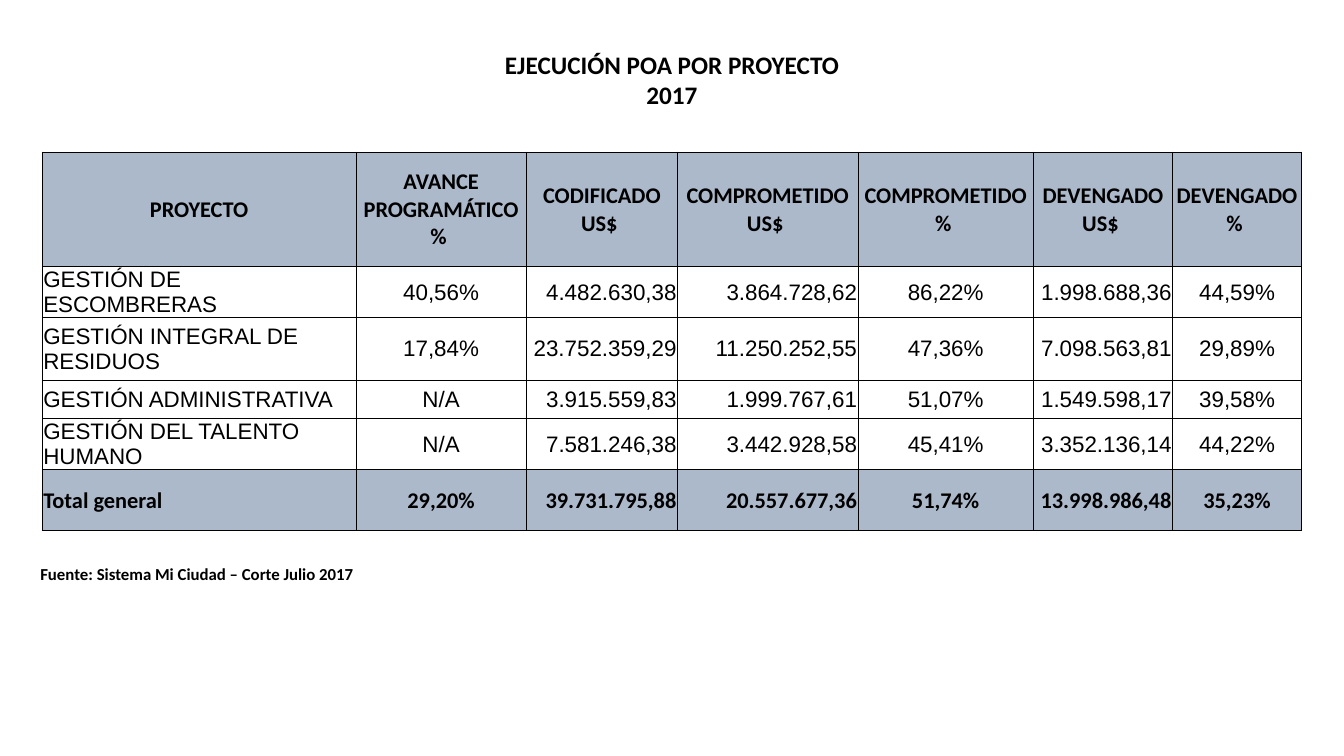
from lxml import etree
from pptx import Presentation
from pptx.dml.color import RGBColor
from pptx.enum.text import MSO_ANCHOR, PP_ALIGN
from pptx.oxml.ns import qn
from pptx.util import Inches, Pt

LEFT, CENTER, RIGHT = PP_ALIGN.LEFT, PP_ALIGN.CENTER, PP_ALIGN.RIGHT
MIDDLE = MSO_ANCHOR.MIDDLE

COLORS = {"text": "000000", "border": "000000", "band": "ACB9CA"}

COLUMN_WIDTHS = [3.11, 1.69, 1.5, 1.79, 1.74, 1.38, 1.28]
COLUMN_ALIGNMENTS = [LEFT, CENTER, RIGHT, RIGHT, CENTER, RIGHT, CENTER]
ROW_HEIGHTS = [1.13, 0.51, 0.62, 0.38, 0.51, 0.6]
ROWS = [
    ["PROYECTO", "AVANCE PROGRAMÁTICO % ", "CODIFICADO US$ ", "COMPROMETIDO US$ ",
     "COMPROMETIDO % ", "DEVENGADO US$ ", "DEVENGADO % "],
    ["GESTIÓN DE ESCOMBRERAS", "40,56%", "4.482.630,38", "3.864.728,62",
     "86,22%", "1.998.688,36", "44,59%"],
    ["GESTIÓN INTEGRAL DE RESIDUOS", "17,84%", "23.752.359,29", "11.250.252,55",
     "47,36%", "7.098.563,81", "29,89%"],
    ["GESTIÓN ADMINISTRATIVA", "N/A", "3.915.559,83", "1.999.767,61",
     "51,07%", "1.549.598,17", "39,58%"],
    ["GESTIÓN DEL TALENTO HUMANO", "N/A", "7.581.246,38", "3.442.928,58",
     "45,41%", "3.352.136,14", "44,22%"],
    ["Total general", "29,20%", "39.731.795,88", "20.557.677,36",
     "51,74%", "13.998.986,48", "35,23%"],
]


class SlideBuilder:
    """Hold the style and the current slide, and add its elements."""

    def __init__(self, slide):
        self.slide = slide
        self.heading_font = "Calibri"
        self.body_font = "Arial"

    def add_run(self, paragraph, text, size, bold=True, alignment=LEFT):
        paragraph.alignment = alignment
        run = paragraph.add_run()
        run.text = text
        run.font.name = self.heading_font if bold else self.body_font
        run.font.size = Pt(size)
        run.font.bold = bold
        run.font.color.rgb = RGBColor.from_string(COLORS["text"])

    def add_text(self, box, lines, size, alignment=LEFT):
        shape = self.slide.shapes.add_textbox(*map(Inches, box))
        frame = shape.text_frame
        frame.word_wrap = True
        frame.vertical_anchor = MIDDLE
        frame.margin_left = frame.margin_right = Inches(0.09)
        frame.margin_top = frame.margin_bottom = Inches(0.04)
        for index, line in enumerate(lines):
            paragraph = frame.add_paragraph() if index else frame.paragraphs[0]
            self.add_run(paragraph, line, size, alignment=alignment)

    def add_borders(self, cell, outer_sides):
        properties = cell._tc.get_or_add_tcPr()
        for side, is_outer in outer_sides.items():
            width = Pt(1 if is_outer else 0.5)
            line = etree.SubElement(properties, qn(f"a:ln{side}"), w=str(width))
            fill = etree.SubElement(line, qn("a:solidFill"))
            etree.SubElement(fill, qn("a:srgbClr"), val=COLORS["border"])

    def add_table(self, left, top):
        last_row, last_column = len(ROWS) - 1, len(COLUMN_WIDTHS) - 1
        table = self.slide.shapes.add_table(
            len(ROWS), len(COLUMN_WIDTHS), Inches(left), Inches(top),
            Inches(sum(COLUMN_WIDTHS)), Inches(sum(ROW_HEIGHTS))).table
        table.first_row = table.horz_banding = False
        for column, width in zip(table.columns, COLUMN_WIDTHS):
            column.width = Inches(width)
        for row_index, values in enumerate(ROWS):
            table.rows[row_index].height = Inches(ROW_HEIGHTS[row_index])
            is_band = row_index in (0, last_row)
            for column_index, value in enumerate(values):
                cell = table.cell(row_index, column_index)
                cell.vertical_anchor = MIDDLE
                cell.margin_left = cell.margin_right = cell.margin_top = Inches(0.01)
                cell.margin_bottom = 0
                self.add_borders(cell, {
                    "L": column_index == 0, "R": column_index == last_column,
                    "T": row_index == 0, "B": row_index == last_row})
                if is_band:
                    cell.fill.solid()
                    cell.fill.fore_color.rgb = RGBColor.from_string(COLORS["band"])
                else:
                    cell.fill.background()
                alignment = COLUMN_ALIGNMENTS[column_index] if row_index else CENTER
                self.add_run(cell.text_frame.paragraphs[0], value, 16, is_band, alignment)


def main():
    presentation = Presentation()
    presentation.slide_width = Inches(13.33)
    presentation.slide_height = Inches(7.5)
    builder = SlideBuilder(presentation.slides.add_slide(presentation.slide_layouts[6]))
    builder.add_table(0.42, 1.51)
    builder.add_text((0.42, 0.4, 12.49, 0.77), ["EJECUCIÓN POA POR PROYECTO", "2017"], 18, CENTER)
    builder.add_text((0.31, 5.45, 4.57, 0.48), ["Fuente: Sistema Mi Ciudad – Corte Julio 2017"], 12)
    presentation.save("out.pptx")


if __name__ == "__main__":
    main()
